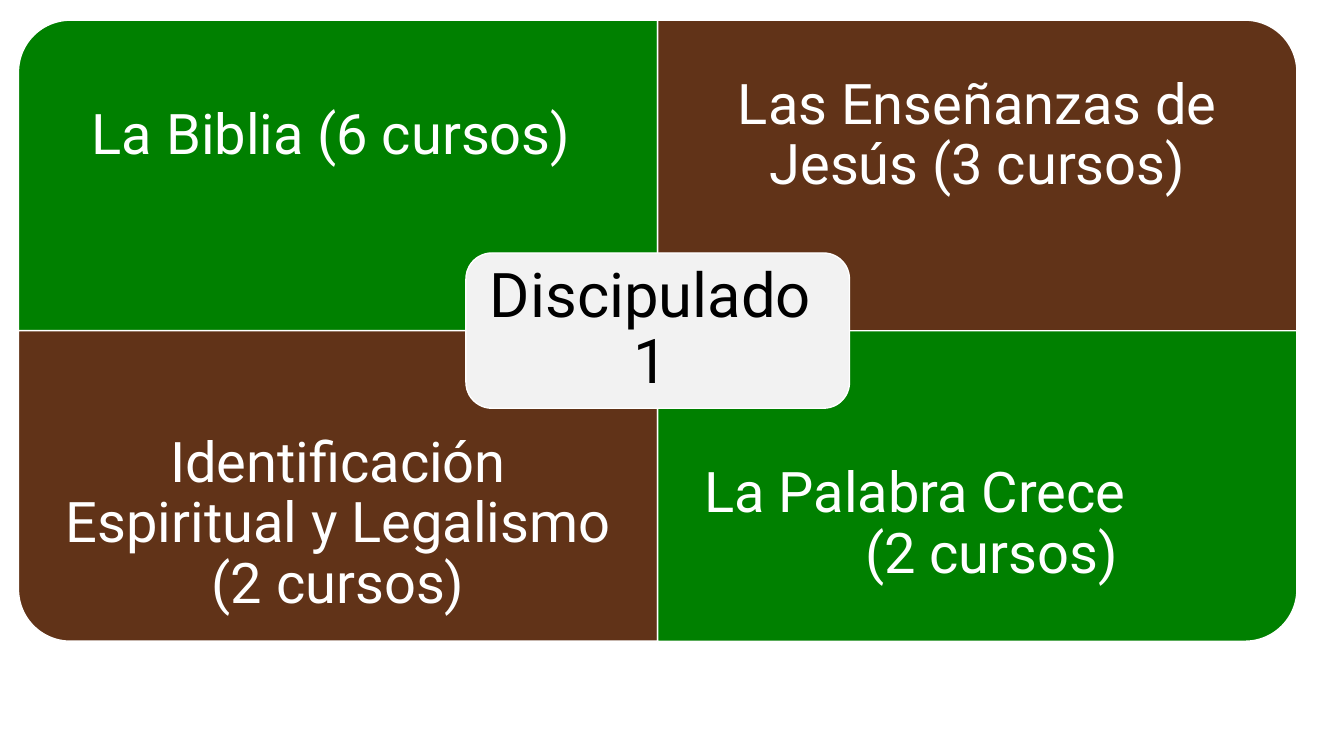
import pptx
import pptx.util
import pptx.dml.color
import pptx.enum.shapes
import pptx.enum.text

Pt = pptx.util.Pt
RGBColor = pptx.dml.color.RGBColor
MSO_SHAPE = pptx.enum.shapes.MSO_SHAPE

GREEN = RGBColor(0x00, 0x80, 0x00)
BROWN = RGBColor(0x61, 0x33, 0x18)
PALE = RGBColor(0xF2, 0xF2, 0xF2)
WHITE = RGBColor(0xFF, 0xFF, 0xFF)
BLACK = RGBColor(0x00, 0x00, 0x00)
FONT = "Roboto"

# column, row, rotation, fill, paragraphs as (text, left margin, right margin)
QUADRANTS = [
    (0, 0, 270, GREEN, [("La Biblia (6 cursos)", 0, 10)]),
    (1, 0, 0, BROWN, [("Las Enseñanzas de Jesús (3 cursos)", 0, 0)]),
    (0, 1, 180, BROWN, [("Identificación Espiritual y Legalismo (2 cursos)", 0, 0)]),
    (1, 1, 90, GREEN, [("La Palabra Crece", 0, 89), ("(2 cursos)", 20, 0)]),
]
HUB = [("Discipulado 1", 0, 0)]

LEFT, TOP = 13.2, 14.4
WIDTH, HEIGHT = 456.6, 221.8
LABEL_HEIGHT = HEIGHT * 0.75
HUB_WIDTH, HUB_HEIGHT = WIDTH * 0.6, HEIGHT / 2
HUB_LABEL_HEIGHT = 100
HUB_LABEL_SHIFT = -5


def add_panel(slide, kind, center_x, center_y, width, height, fill, rotation=0):
    if rotation in (90, 270):
        width, height = height, width
    shape = slide.shapes.add_shape(
        kind, Pt(center_x - width / 2), Pt(center_y - height / 2), Pt(width), Pt(height))
    shape.rotation = rotation
    shape.adjustments[0] = 0.167
    shape.shadow.inherit = False
    shape.fill.solid()
    shape.fill.fore_color.rgb = fill
    shape.line.color.rgb = WHITE
    shape.line.width = Pt(1)


def add_label(slide, left, top, width, height, paragraphs, inset, size, color):
    box = slide.shapes.add_textbox(Pt(left), Pt(top), Pt(width), Pt(height))
    frame = box.text_frame
    frame.word_wrap = True
    frame.vertical_anchor = pptx.enum.text.MSO_ANCHOR.MIDDLE
    frame.margin_left = frame.margin_right = Pt(inset)
    frame.margin_top = frame.margin_bottom = Pt(inset)
    for index, (text, margin_left, margin_right) in enumerate(paragraphs):
        paragraph = frame.paragraphs[0] if index == 0 else frame.add_paragraph()
        paragraph.alignment = pptx.enum.text.PP_ALIGN.CENTER
        paragraph.line_spacing = 0.9
        properties = paragraph._p.get_or_add_pPr()
        properties.set("marL", str(Pt(margin_left)))
        properties.set("marR", str(Pt(margin_right)))
        run = paragraph.add_run()
        run.text = text
        run.font.name = FONT
        run.font.size = Pt(size)
        run.font.color.rgb = color


def main():
    presentation = pptx.Presentation()
    presentation.slide_width = Pt(960)
    presentation.slide_height = Pt(540)
    slide = presentation.slides.add_slide(presentation.slide_layouts[6])

    for column, row, rotation, fill, paragraphs in QUADRANTS:
        left = LEFT + column * WIDTH
        top = TOP + row * HEIGHT
        add_panel(slide, MSO_SHAPE.ROUND_1_RECTANGLE, left + WIDTH / 2, top + HEIGHT / 2,
                  WIDTH, HEIGHT, fill, rotation)
        label_top = top + row * (HEIGHT - LABEL_HEIGHT)
        add_label(slide, left, label_top, WIDTH, LABEL_HEIGHT, paragraphs, 24, 40, WHITE)

    center_x, center_y = LEFT + WIDTH, TOP + HEIGHT
    add_panel(slide, MSO_SHAPE.ROUNDED_RECTANGLE, center_x, center_y,
              HUB_WIDTH, HUB_HEIGHT, PALE)
    add_label(slide, center_x - HUB_WIDTH / 2 + HUB_LABEL_SHIFT,
              center_y - HUB_LABEL_HEIGHT / 2, HUB_WIDTH, HUB_LABEL_HEIGHT,
              HUB, 12, 44, BLACK)
    presentation.save("out.pptx")


if __name__ == "__main__":
    main()
